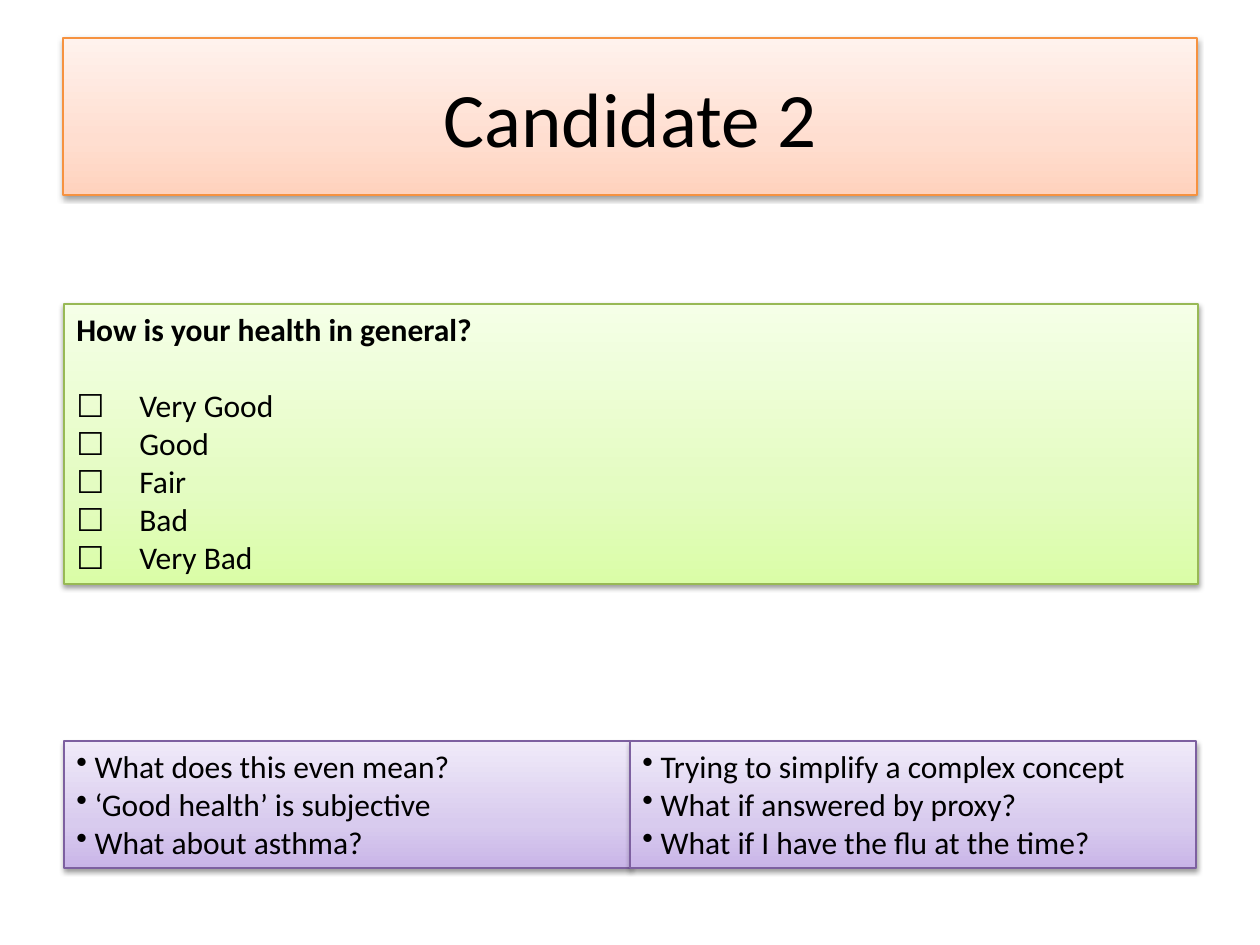
from copy import deepcopy

from lxml.etree import SubElement
from pptx import Presentation
from pptx.dml.color import RGBColor
from pptx.enum.text import MSO_ANCHOR, MSO_AUTO_SIZE, PP_ALIGN
from pptx.oxml.ns import qn
from pptx.util import Pt

PX = 914400 / 126
BLACK = RGBColor(0x00, 0x00, 0x00)
ORANGE_LINE = RGBColor(0xF6, 0x92, 0x40)
ORANGES = [RGBColor(0xFF, 0xD2, 0xBD), RGBColor(0xFF, 0xDE, 0xD0), RGBColor(0xFF, 0xF2, 0xED)]
GREEN_LINE = RGBColor(0x98, 0xB9, 0x55)
GREENS = [RGBColor(0xDA, 0xFD, 0xA7), RGBColor(0xE4, 0xFC, 0xC2), RGBColor(0xF5, 0xFF, 0xE7)]
PURPLE_LINE = RGBColor(0x7D, 0x60, 0xA0)
PURPLES = [RGBColor(0xC9, 0xB5, 0xE8), RGBColor(0xD8, 0xCB, 0xEE), RGBColor(0xF0, 0xEA, 0xF9)]


def style_panel(panel, box, colours, line):
    """Place a panel and give it a three-stop upward gradient, outline and soft shadow."""
    panel.left, panel.top, panel.width, panel.height = [round(v * PX) for v in box]
    panel.fill.gradient()
    panel.fill.gradient_angle = 90
    stop_list = panel._element.spPr.find(".//" + qn("a:gsLst"))
    stop_list.insert(1, deepcopy(stop_list[0]))
    for stop, position, colour in zip(panel.fill.gradient_stops, (0, 0.35, 1), colours):
        stop.position = position
        stop.color.rgb = colour
    panel.line.color.rgb = line
    panel.line.width = Pt(0.75)
    panel.shadow.inherit = False
    effects = panel._element.spPr.find(qn("a:effectLst"))
    shadow = SubElement(effects, qn("a:outerShdw"), blurRad="40000", dist="20000",
                        dir="5400000", rotWithShape="0")
    black = SubElement(shadow, qn("a:srgbClr"), val="000000")
    SubElement(black, qn("a:alpha"), val="38000")
    panel.text_frame.word_wrap = True


def add_text(paragraph, text, size=18, bold=False, font="Calibri", bullet=False):
    run = paragraph.add_run()
    run.text = text
    run.font.size = Pt(size)
    run.font.bold = bold
    run.font.name = font
    run.font.color.rgb = BLACK
    SubElement(run._r.rPr, qn("a:ea"), typeface=font)
    if bullet:
        SubElement(paragraph._p.get_or_add_pPr(), qn("a:buChar"), char="•")


presentation = Presentation()
presentation.slide_width = round(1260 * PX)
presentation.slide_height = round(945 * PX)
slide = presentation.slides.add_slide(presentation.slide_layouts[5])

heading = slide.shapes.title
style_panel(heading, (63, 38, 1134, 157), ORANGES, ORANGE_LINE)
heading.text_frame.vertical_anchor = MSO_ANCHOR.MIDDLE
heading_line = heading.text_frame.paragraphs[0]
heading_line.alignment = PP_ALIGN.CENTER
add_text(heading_line, "Candidate 2", size=44)

# Survey question with its answer boxes
question = slide.shapes.add_textbox(0, 0, 0, 0)
style_panel(question, (64, 304, 1134, 280), GREENS, GREEN_LINE)
question.text_frame.auto_size = MSO_AUTO_SIZE.SHAPE_TO_FIT_TEXT
prompt = question.text_frame.paragraphs[0]
prompt.space_after = Pt(22)
add_text(prompt, "How is your health in general?", bold=True)
for answer in ("Very Good", "Good", "Fair", "Bad", "Very Bad"):
    option = question.text_frame.add_paragraph()
    add_text(option, "☐\t", font="Noto Sans CJK JP")
    add_text(option, answer)

# Two columns of criticisms
criticisms = [
    ("What does this even mean?", "‘Good health’ is subjective", "What about asthma?"),
    ("Trying to simplify a complex concept", "What if answered by proxy?",
     "What if I have the flu at the time?"),
]
for column, remarks in enumerate(criticisms):
    critique = slide.shapes.add_textbox(0, 0, 0, 0)
    style_panel(critique, (64 + 566 * column, 741, 566, 127), PURPLES, PURPLE_LINE)
    critique.text_frame.auto_size = MSO_AUTO_SIZE.SHAPE_TO_FIT_TEXT
    for row, remark in enumerate(remarks):
        frame = critique.text_frame
        paragraph = frame.add_paragraph() if row else frame.paragraphs[0]
        add_text(paragraph, " " + remark, bullet=True)

presentation.save("out.pptx")
